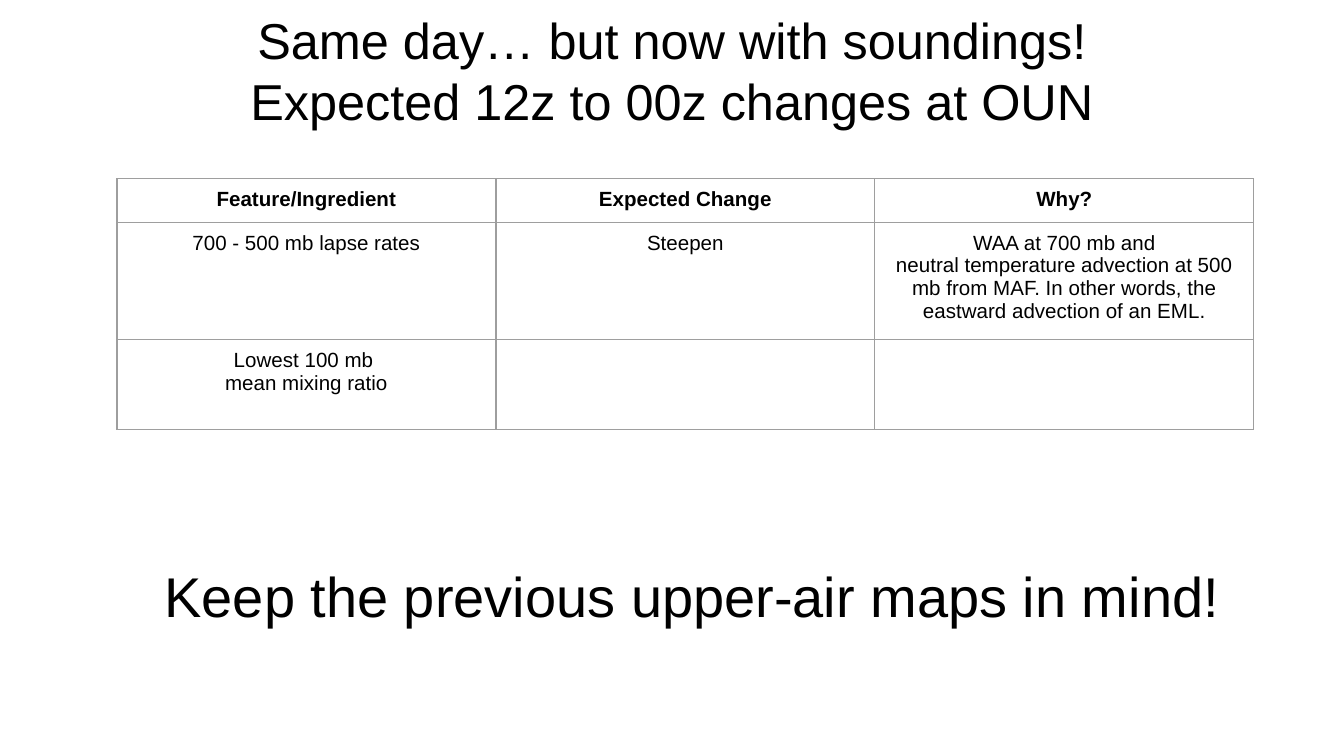
"""Build the slide on expected sounding changes at OUN."""
from lxml.etree import SubElement
from pptx import Presentation
from pptx.dml.color import RGBColor
from pptx.enum.text import MSO_ANCHOR, PP_ALIGN
from pptx.oxml.ns import qn
from pptx.util import Inches, Pt

HEADINGS = [
    (["Same day… but now with soundings!", "Expected 12z to 00z changes at OUN"],
     (0.5, 0.17, 9, 0.7), 27),
    (["Keep the previous upper-air maps in mind!"], (0.65, 3.96, 9, 0.94), 30),
]
CHANGES = [
    (["Feature/Ingredient"], ["Expected Change"], ["Why?"]),
    (["700 - 500 mb lapse rates"], ["Steepen"],
     ["WAA at 700 mb and",
      "neutral temperature advection at 500 mb from MAF. In other words, "
      "the eastward advection of an EML."]),
    (["Lowest 100 mb ", "mean mixing ratio"], [""], [""]),
]
SLIDE_WIDTH = 10
TABLE_LEFT, TABLE_TOP = 0.87, 1.33
COLUMN_WIDTH = 2.82
ROW_HEIGHTS = [0.32, 0.74, 0.67]
TEXT_COLOR, BORDER_COLOR = "000000", "9E9E9E"


def color(value):
    return RGBColor.from_string(value)


def write(frame, lines, size, bold=False):
    frame.text = "\n".join(lines)
    frame.word_wrap = True
    for paragraph in frame.paragraphs:
        paragraph.alignment = PP_ALIGN.CENTER
        paragraph.line_spacing = 1.0
        paragraph.space_before = paragraph.space_after = Pt(0)
        paragraph.font.name = "Arial"
        paragraph.font.size = Pt(size)
        paragraph.font.bold = bold
        paragraph.font.color.rgb = color(TEXT_COLOR)


def add_borders(cell):
    properties = cell._tc.get_or_add_tcPr()
    for side in ("lnL", "lnR", "lnT", "lnB"):
        border = SubElement(properties, qn(f"a:{side}"), w=str(Pt(0.75)))
        fill = SubElement(border, qn("a:solidFill"))
        SubElement(fill, qn("a:srgbClr"), val=BORDER_COLOR)


def add_heading(slide, lines, box, size):
    frame = slide.shapes.add_textbox(*map(Inches, box)).text_frame
    frame.vertical_anchor = MSO_ANCHOR.MIDDLE
    write(frame, lines, size)


def add_changes(slide):
    columns = len(CHANGES[0])
    table = slide.shapes.add_table(
        len(CHANGES), columns, Inches(TABLE_LEFT), Inches(TABLE_TOP),
        Inches(columns * COLUMN_WIDTH), Inches(sum(ROW_HEIGHTS))).table
    for column in table.columns:
        column.width = Inches(COLUMN_WIDTH)
    for r, (change, height) in enumerate(zip(CHANGES, ROW_HEIGHTS)):
        table.rows[r].height = Inches(height)
        for c, lines in enumerate(change):
            cell = table.cell(r, c)
            cell.margin_top = cell.margin_bottom = Inches(0.07)
            add_borders(cell)
            cell.fill.background()
            write(cell.text_frame, lines, 11, bold=r == 0)


def main():
    deck = Presentation()
    deck.slide_width = Inches(SLIDE_WIDTH)
    deck.slide_height = Inches(SLIDE_WIDTH * 9 / 16)
    slide = deck.slides.add_slide(deck.slide_layouts[6])
    title, reminder = HEADINGS
    add_heading(slide, *title)
    add_changes(slide)
    add_heading(slide, *reminder)
    deck.save("out.pptx")


if __name__ == "__main__":
    main()
